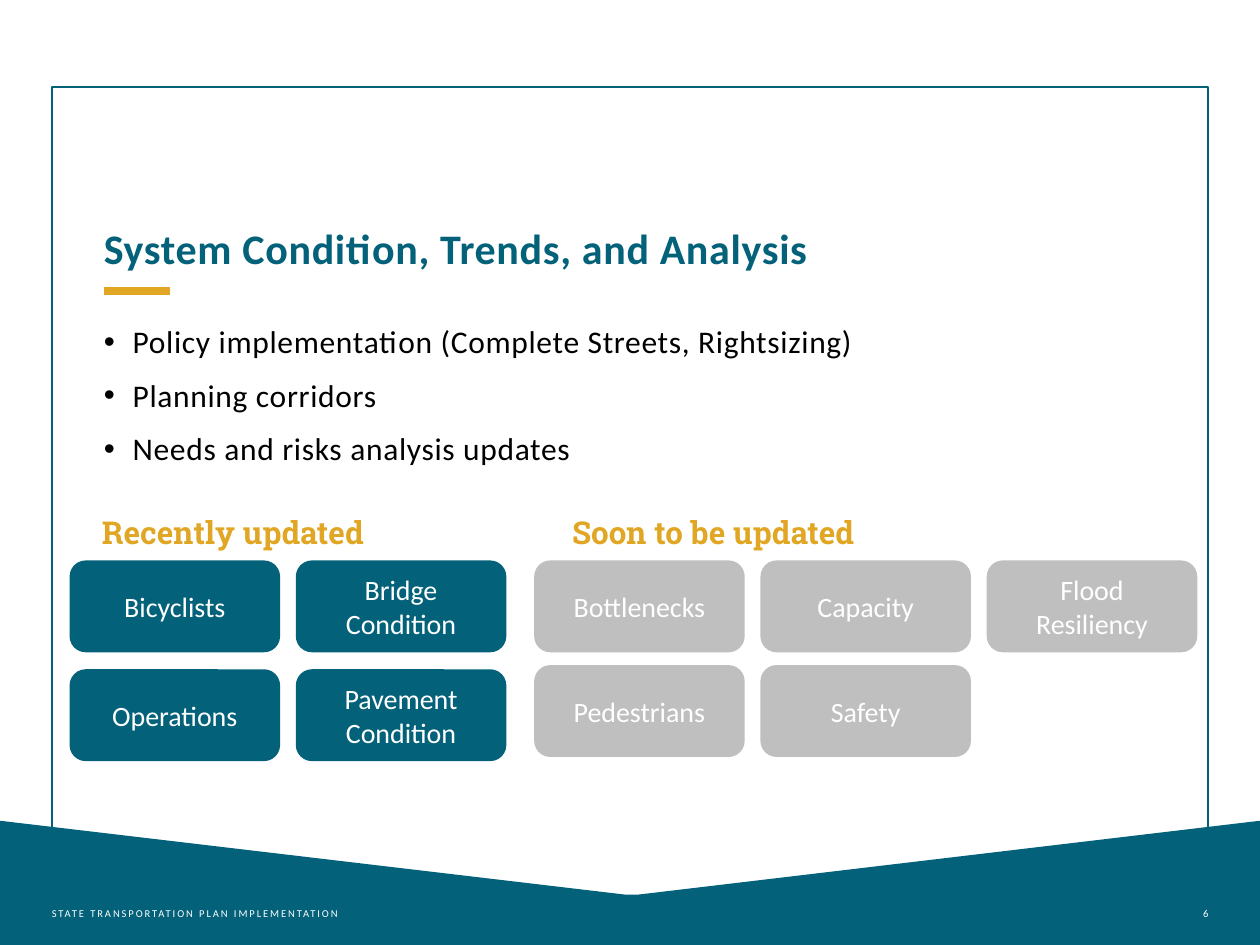
from lxml.etree import SubElement
from pptx import Presentation
from pptx.dml.color import RGBColor
from pptx.enum.shapes import MSO_CONNECTOR, MSO_SHAPE
from pptx.enum.text import MSO_ANCHOR, MSO_AUTO_SIZE, PP_ALIGN
from pptx.oxml.ns import qn
from pptx.util import Pt

TEAL = RGBColor(0x03, 0x61, 0x7A)
GOLD = RGBColor(0xE0, 0xA6, 0x24)
GRAY = RGBColor(0xBF, 0xBF, 0xBF)
WHITE = RGBColor(0xFF, 0xFF, 0xFF)
BLACK = RGBColor(0x00, 0x00, 0x00)


class SlideBuilder:
    body_font = "Calibri"
    heading_font = "Roboto Slab"

    def __init__(self, slide):
        self.slide = slide
        self.shapes = slide.shapes

    def style(self, paragraph, size, color, font=body_font, bold=False, tracking=0):
        for run in paragraph.runs:
            run.font.size = Pt(size)
            run.font.name = font
            run.font.bold = bold
            run.font.color.rgb = color
            if tracking:
                run._r.get_or_add_rPr().set("spc", str(round(tracking * 100)))

    def place(self, placeholder, left, top, width, height):
        placeholder.left, placeholder.top = Pt(left), Pt(top)
        placeholder.width, placeholder.height = Pt(width), Pt(height)
        frame = placeholder.text_frame
        frame.auto_size = MSO_AUTO_SIZE.NONE
        frame.vertical_anchor = MSO_ANCHOR.TOP
        frame.margin_left = 0
        return frame

    def title(self, text, *box):
        frame = self.place(self.shapes.title, *box)
        frame.text = text
        heading = frame.paragraphs[0]
        heading.alignment = PP_ALIGN.LEFT
        heading.line_spacing = 0.9
        self.style(heading, 24, TEAL, bold=True, tracking=0.4)

    def bullets(self, items, *box):
        frame = self.place(self.slide.placeholders[1], *box)
        frame.text = "\n".join(items)
        for index, item in enumerate(frame.paragraphs):
            properties = item._p.get_or_add_pPr()
            properties.set("marL", str(Pt(16.5)))
            properties.set("indent", str(-Pt(16.5)))
            SubElement(properties, qn("a:buFont"), typeface="Arial")
            SubElement(properties, qn("a:buChar"), char="•")
            item.space_before = Pt(9 if index else 0)
            self.style(item, 18, BLACK, tracking=0.4)

    def band(self, points):
        outline = self.shapes.build_freeform(Pt(points[0][0]), Pt(points[0][1]))
        outline.add_line_segments([(Pt(x), Pt(y)) for x, y in points[1:]])
        band = outline.convert_to_shape()
        band.shadow.inherit = False
        band.fill.solid()
        band.fill.fore_color.rgb = TEAL
        band.line.fill.background()

    def frame(self, left, top, width, height):
        frame = self.shapes.add_shape(
            MSO_SHAPE.RECTANGLE, Pt(left), Pt(top), Pt(width), Pt(height))
        frame.shadow.inherit = False
        frame.fill.background()
        frame.line.color.rgb = TEAL
        frame.line.width = Pt(1)

    def rule(self, left, right, y):
        rule = self.shapes.add_connector(
            MSO_CONNECTOR.STRAIGHT, Pt(left), Pt(y), Pt(right), Pt(y))
        SubElement(rule._element.spPr, qn("a:effectLst"))
        rule.line.color.rgb = GOLD
        rule.line.width = Pt(4.5)

    def text_box(self, text, left, top, width, height):
        frame = self.shapes.add_textbox(
            Pt(left), Pt(top), Pt(width), Pt(height)).text_frame
        frame.word_wrap = True
        frame.text = text
        return frame

    def footer(self, text, left, width, alignment):
        frame = self.text_box(text, left, 500.4, width, 28.8)
        frame.vertical_anchor = MSO_ANCHOR.BOTTOM
        frame.margin_left = frame.margin_right = 0
        frame.paragraphs[0].alignment = alignment
        self.style(frame.paragraphs[0], 6, WHITE, tracking=1.1)

    def group_heading(self, text, left):
        frame = self.text_box(text, left, 289.5, 221, 29)
        self.style(frame.paragraphs[0], 18, GOLD, self.heading_font, bold=True)

    def tile(self, text, left, top, color):
        tile = self.shapes.add_shape(
            MSO_SHAPE.ROUNDED_RECTANGLE, Pt(left), Pt(top), Pt(118.8), Pt(51))
        tile.shadow.inherit = False
        tile.fill.solid()
        tile.fill.fore_color.rgb = color
        tile.line.color.rgb = color
        tile.line.width = Pt(1.5)
        frame = tile.text_frame
        frame.vertical_anchor = MSO_ANCHOR.MIDDLE
        frame.text = text
        frame.paragraphs[0].alignment = PP_ALIGN.CENTER
        self.style(frame.paragraphs[0], 16, WHITE)

    def tile_grid(self, rows, left, row_tops, color):
        for topics, top in zip(rows, row_tops):
            for column, topic in enumerate(topics):
                self.tile(topic, left + column * 129.3, top, color)


def main():
    presentation = Presentation()
    presentation.slide_width, presentation.slide_height = Pt(720), Pt(540)
    builder = SlideBuilder(presentation.slides.add_slide(presentation.slide_layouts[1]))

    builder.band([(0, 469), (357, 511.2), (365, 511.2), (720, 469), (720, 540), (0, 540)])
    builder.frame(29.6, 49.7, 660.6, 479.5)
    builder.footer("STATE TRANSPORTATION PLAN IMPLEMENTATION", 29.6, 192, PP_ALIGN.LEFT)
    builder.footer("6", 620.5, 70, PP_ALIGN.RIGHT)

    builder.title("System Condition, Trends, and Analysis", 59.3, 126.7, 628, 36)
    builder.rule(59.3, 97.2, 166.5)
    builder.bullets([
        "Policy implementation (Complete Streets, Rightsizing)",
        "Planning corridors",
        "Needs and risks analysis updates",
    ], 59.3, 180.5, 628, 96)

    builder.group_heading("Recently updated", 51.2)
    builder.tile_grid([
        ["Bicyclists", "Bridge Condition"],
        ["Operations", "Pavement Condition"],
    ], 40.5, [321, 383.2], TEAL)

    builder.group_heading("Soon to be updated", 319.8)
    builder.tile_grid([
        ["Bottlenecks", "Capacity", "Flood Resiliency"],
        ["Pedestrians", "Safety"],
    ], 306, [321, 380.8], GRAY)

    presentation.save("out.pptx")


if __name__ == "__main__":
    main()
